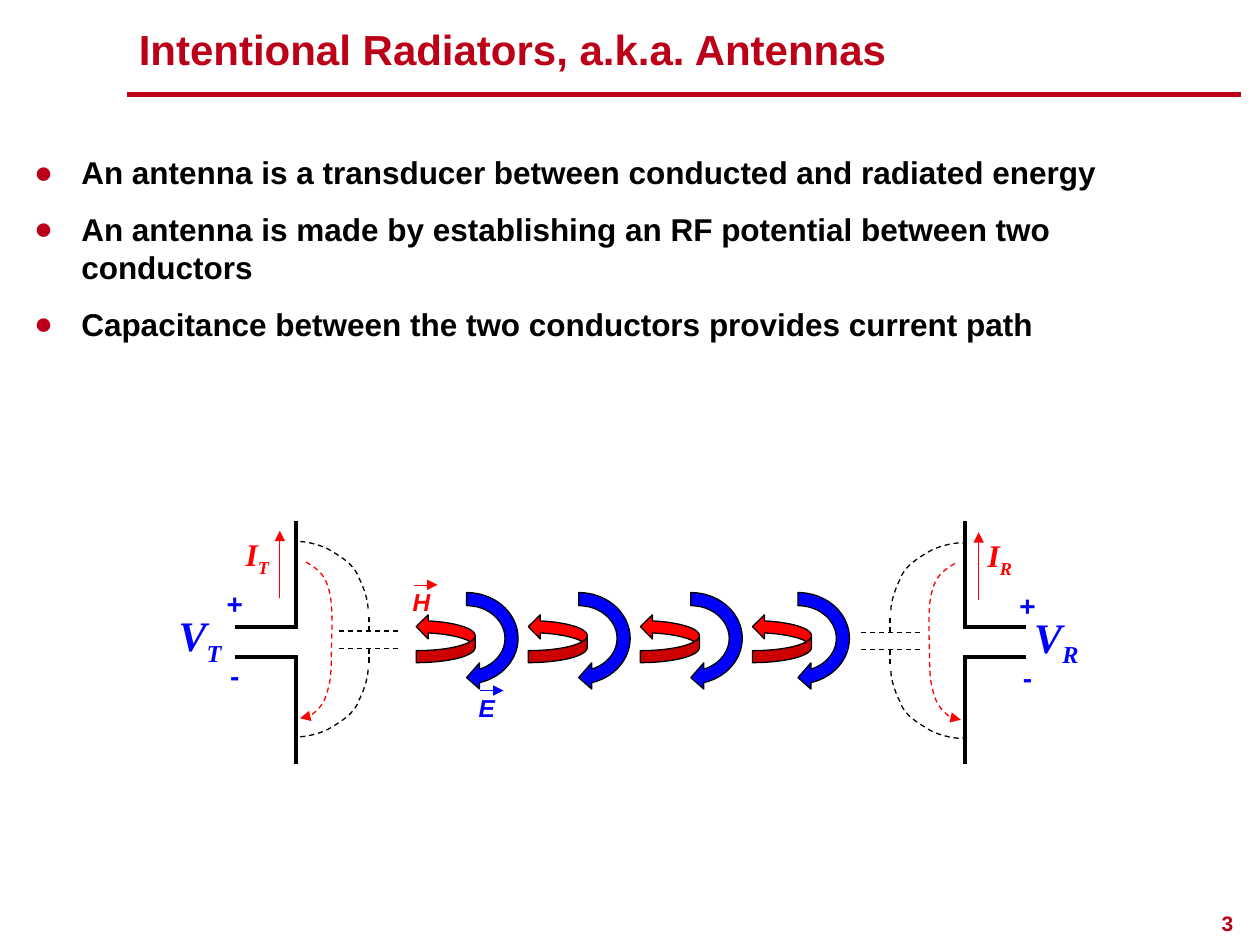
from pptx import Presentation
from pptx.dml.color import RGBColor
from pptx.enum.dml import MSO_LINE as Dash
from pptx.enum.shapes import MSO_CONNECTOR as Conn, MSO_SHAPE as Shape
from pptx.enum.text import MSO_ANCHOR as Anchor, PP_ALIGN as Align
from pptx.oxml.ns import qn
from pptx.util import Cm, Pt
from lxml.etree import SubElement as Sub

CRIMSON = RGBColor(0xBB, 0x00, 0x18)
BLACK = RGBColor(0x00, 0x00, 0x00)
RED = RGBColor(0xFF, 0x00, 0x00)
BLUE = RGBColor(0x00, 0x00, 0xFF)
SERIF = "Times New Roman"

deck = Presentation()
deck.slide_width, deck.slide_height = Cm(25.4), Cm(19.05)
slide = deck.slides.add_slide(deck.slide_layouts[6])
parts = slide.shapes


def text(words, left, top, width, height, size, color, sub="", font="Arial",
         italic=False, wrap=False, align=Align.LEFT, anchor=Anchor.TOP):
    """Add a bold text box, with an optional subscript, and return its frame."""
    box = parts.add_textbox(Cm(left), Cm(top), Cm(width), Cm(height))
    frame = box.text_frame
    frame.word_wrap = wrap
    frame.vertical_anchor = anchor
    lines = [words] if isinstance(words, str) else words
    for i, line in enumerate(lines):
        para = frame.paragraphs[0] if i == 0 else frame.add_paragraph()
        para.alignment = align
        for part in filter(None, (line, sub)):
            run = para.add_run()
            run.text = part
            run.font.name, run.font.size = font, Pt(size)
            run.font.bold, run.font.italic = True, italic
            run.font.color.rgb = color
        if sub:
            run.font._element.set("baseline", "-25000")
    return frame


def stroke(points, color, width, dash=False, arrow=False):
    """Draw a straight line through two points, or a Bezier curve from more."""
    spots = [(Cm(x), Cm(y)) for x, y in points]
    if len(spots) == 2:
        item = parts.add_connector(Conn.STRAIGHT, *spots[0], *spots[1])
    else:
        pen = parts.build_freeform(*spots[0])
        pen.add_line_segments(spots[1:], close=False)
        item = pen.convert_to_shape()
        item.fill.background()
        # Join every three points into one cubic segment
        legs = list(item._element.iter(qn("a:lnTo")))
        for k in range(0, len(legs), 3):
            cubic = Sub(legs[k].getparent(), qn("a:cubicBezTo"))
            for leg in legs[k:k + 3]:
                cubic.append(leg[0])
                leg.getparent().remove(leg)
    item.line.color.rgb = color
    item.line.width = Pt(width)
    if dash:
        item.line.dash_style = Dash.DASH
    if arrow:
        Sub(item.line._get_or_add_ln(), qn("a:tailEnd"), type="triangle")
    Sub(item._element.spPr, qn("a:effectLst"))


# Page number, rule and title
num = text("3", 24.07, 18.29, 1.04, 0.71, 12, CRIMSON, align=Align.RIGHT)
num.paragraphs[0].line_spacing = 0.9
stroke([(2.57, 1.91), (25.02, 1.91)], CRIMSON, 3)
text("Intentional Radiators, a.k.a. Antennas", 2.55, 0.43, 20.14, 1.12, 24,
     CRIMSON, wrap=True, anchor=Anchor.MIDDLE)

# Bullet list
body = text([
    "An antenna is a transducer between conducted and radiated energy",
    "An antenna is made by establishing an RF potential between two conductors",
    "Capacitance between the two conductors provides current path",
], 0.44, 2.97, 24.43, 14.76, 18, BLACK, wrap=True)
for i, para in enumerate(body.paragraphs):
    para.space_before = Pt(3.6 if i else 0)
    para.space_after = Pt(7.2)
    prop = para._p.get_or_add_pPr()
    prop.set("marL", str(Cm(0.95)))
    prop.set("indent", str(-Cm(0.95)))
    Sub(Sub(prop, qn("a:buClr")), qn("a:srgbClr"), val=str(CRIMSON))
    Sub(prop, qn("a:buFont"), typeface="Arial")
    Sub(prop, qn("a:buChar"), char="●")

# Bezier control points of the field and current lines on the left side
FIELD = [(7.42, 12.27), (7.42, 12.09), (7.32, 11.81), (7.24, 11.66),
         (7.19, 11.51), (7.11, 11.43), (7.01, 11.33),
         (6.88, 11.23), (6.73, 11.13), (6.58, 11.05),
         (6.4, 10.97), (6.12, 10.9), (5.97, 10.92)]
LOWER = [(x, 25.77 - y) for x, y in FIELD]
FLOW = [(6.17, 11.33), (6.38, 11.46), (6.55, 11.56), (6.63, 11.89),
        (6.73, 12.19), (6.68, 12.93), (6.68, 13.28),
        (6.68, 13.61), (6.65, 13.77), (6.6, 13.94),
        (6.55, 14.15), (6.43, 14.3), (6.32, 14.38),
        (6.22, 14.48), (6.12, 14.48), (6.05, 14.48)]

# Straight lines on the left side
WIRES = [[(4.74, 12.64), (5.97, 12.64)], [(5.97, 12.67), (5.97, 10.5)],
         [(4.74, 13.24), (5.97, 13.24)], [(5.97, 13.21), (5.97, 15.4)]]
AMP = [(5.64, 12.06), (5.64, 10.7)]
PLATES = [[(6.83, 12.72), (8.05, 12.72)], [(6.83, 13.07), (8.05, 13.07)],
          [(7.44, 12.72), (7.44, 12.37)], [(7.44, 13.07), (7.44, 13.41)]]

# Transmitting antenna, then the receiving one as its mirror image
for sub, flip, drop, lefts in (("T", False, 0, (3.35, 4.32, 4.39, 4.7)),
                               ("R", True, 0.03, (20.6, 20.3, 20.37, 19.66))):
    for wire in WIRES:
        stroke([(25.43 - x if flip else x, y) for x, y in wire], BLACK, 2.25)

    volt, plus, minus, amp = lefts
    text("V", volt, 12.17 + drop, 1.45, 1.27, 24, BLUE, sub, SERIF, True)
    text("+", plus, 11.7 + drop, 0.84, 0.94, 16, BLUE)
    text("-", minus, 13.16 + drop, 0.71, 0.94, 16, BLUE)
    text("I", amp, 10.66 + drop, 1.03, 1.02, 18, RED, sub, SERIF, True)

    for line, total, color, dash, head in (
            (AMP, 25.37, RED, False, True),
            *((plate, 25.38, BLACK, True, False) for plate in PLATES),
            (FIELD, 25.38, BLACK, True, False),
            (LOWER, 25.38, BLACK, True, False),
            (FLOW, 25.42, RED, True, True)):
        spots = [(total - x if flip else x, y + drop) for x, y in line]
        stroke(spots, color, 0.75, dash, head)

# Field vectors
for name, left, top, color in (("H", 8.07, 11.71, RED), ("E", 9.4, 13.84, BLUE)):
    text(name, left, top, 0.85, 0.84, 14, color, italic=True)
    stroke([(left + 0.28, top + 0.08), (left + 0.75, top + 0.08)], color, 0.25,
           arrow=True)

# Chain of magnetic and electric loops
for i, ring in enumerate((8.35, 10.61, 12.87, 15.03)):
    for kind, left, top, width, height, color in (
            (Shape.CURVED_LEFT_ARROW, 8.39 + 2.26 * i, 12.39, 1.19, 0.97, RED),
            (Shape.CIRCULAR_ARROW, ring, 11.7, 2.11, 2.34, BLUE)):
        loop = parts.add_shape(kind, Cm(left), Cm(top), Cm(width), Cm(height))
        loop.shadow.inherit = False
        loop.fill.solid()
        loop.fill.fore_color.rgb = color
        loop.line.color.rgb = BLACK
        loop.line.width = Pt(0.75)
        if kind == Shape.CIRCULAR_ARROW:
            loop.rotation = 90
        else:
            loop._element.spPr.xfrm.set("flipV", "1")

deck.save("out.pptx")
